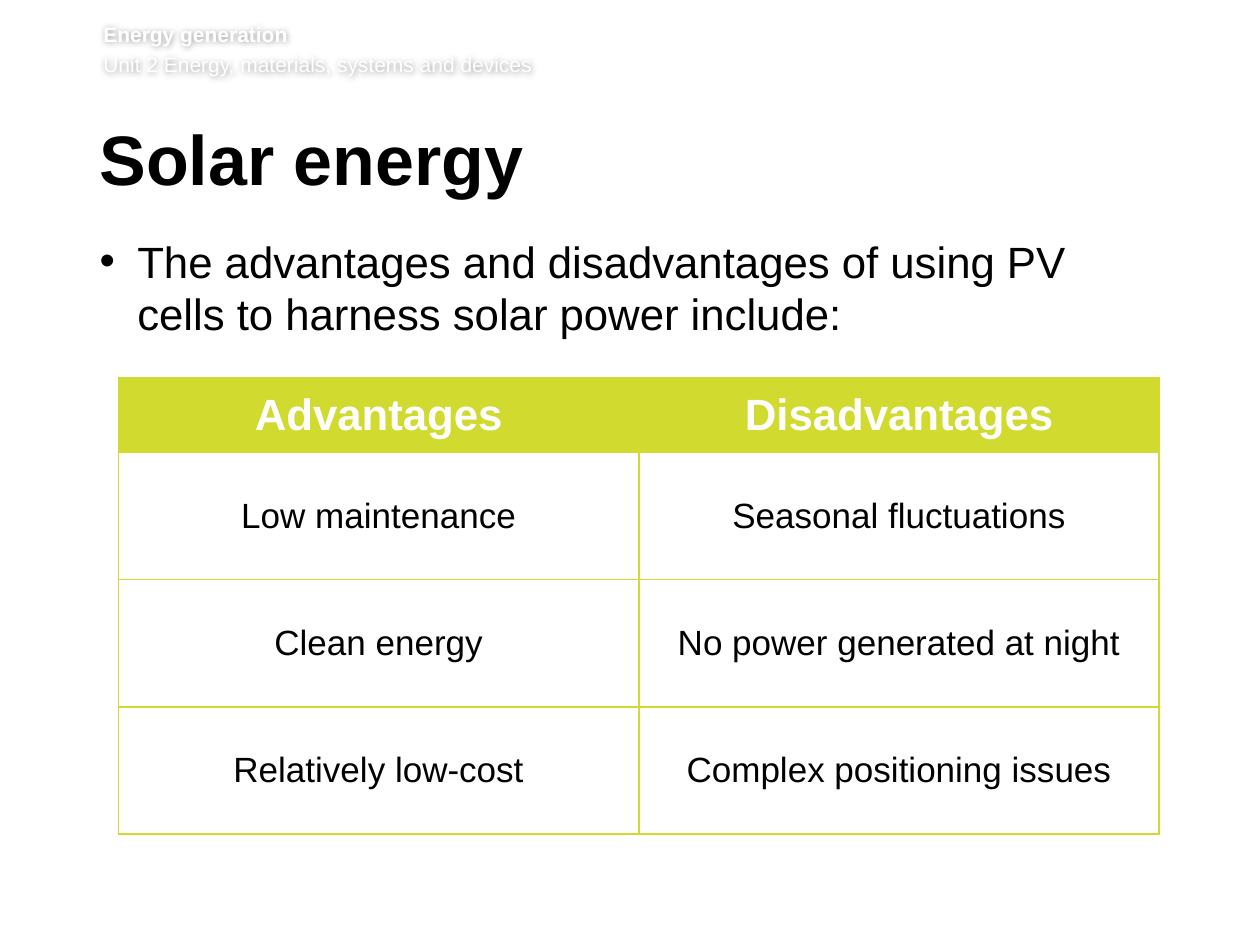
from dataclasses import dataclass
from lxml.etree import SubElement
from pptx import Presentation
from pptx.dml.color import RGBColor as Color
from pptx.enum.text import MSO_ANCHOR as Anchor, PP_ALIGN as Align
from pptx.oxml.ns import qn
from pptx.util import Inches, Pt

HEADER = [("Energy generation", True),
          ("Unit 2 Energy, materials, systems and devices", False)]
TITLE = "Solar energy"
INTRO = "The advantages and disadvantages of using PV cells to harness solar power include:"
ROWS = [
    ("Advantages", "Disadvantages"),
    ("Low maintenance", "Seasonal fluctuations"),
    ("Clean energy", "No power generated at night"),
    ("Relatively low-cost", "Complex positioning issues"),
]
TABLE_LEFT, TABLE_TOP, COLUMN_WIDTH = 0.94, 3, 4.13
HEAD_HEIGHT, ROW_HEIGHT = 0.59, 1.01


@dataclass(frozen=True)
class Theme:
    font: str = "Arial"
    black: str = "000000"
    white: str = "FFFFFF"
    lime: str = "D1DA2E"
    header: int = 12
    title: int = 40
    body: int = 25
    cell: int = 20
    border: int = 1
    blur: int = 4


THEME = Theme()


def style(para, size, color, bold=False):
    para.font.name = THEME.font
    para.font.size = Pt(size)
    para.font.bold = bold
    para.font.color.rgb = Color.from_string(color)


def add_box(page, left, top, width, height, margins):
    box = page.shapes.add_textbox(*map(Inches, (left, top, width, height)))
    frame = box.text_frame
    frame.word_wrap = True
    (frame.margin_left, frame.margin_top,
     frame.margin_right, frame.margin_bottom) = map(Inches, margins)
    return box


def add_halo(box):
    effects = SubElement(box._element.spPr, qn("a:effectLst"))
    shadow = SubElement(effects, qn("a:outerShdw"), blurRad=str(Pt(THEME.blur)),
                        dist="0", dir="0", algn="ctr", rotWithShape="0")
    color = SubElement(shadow, qn("a:srgbClr"), val=THEME.black)
    SubElement(color, qn("a:alpha"), val="40000")


def add_bullet(para, indent):
    props = para._p.get_or_add_pPr()
    props.set("marL", str(Inches(indent)))
    props.set("indent", str(-Inches(indent)))
    SubElement(props, qn("a:buFont"), typeface=THEME.font)
    SubElement(props, qn("a:buChar"), char="•")


def add_borders(cell):
    props = cell._tc.get_or_add_tcPr()
    for index, side in enumerate(("lnL", "lnR", "lnT", "lnB")):
        line = props.makeelement(qn(f"a:{side}"), {"w": str(Pt(THEME.border))})
        fill = SubElement(line, qn("a:solidFill"))
        SubElement(fill, qn("a:srgbClr"), val=THEME.lime)
        props.insert(index, line)


def add_header(page):
    box = add_box(page, 0.82, 0.17, 8.82, 0.49, (0, 0, 0, 0.05))
    add_halo(box)
    frame = box.text_frame
    for index, (text, bold) in enumerate(HEADER):
        para = frame.add_paragraph() if index else frame.paragraphs[0]
        if index:
            para.space_before = Pt(2.9)
        para.text = text
        style(para, THEME.header, THEME.white, bold)


def add_title(page):
    box = add_box(page, 0.79, 0.99, 8.55, 0.73, (0, 0.05, 0.1, 0.05))
    para = box.text_frame.paragraphs[0]
    para.text = TITLE
    para.line_spacing = Pt(39)
    style(para, THEME.title, THEME.black, True)


def add_intro(page):
    box = add_box(page, 0.79, 1.86, 8.53, 1, (0, 0, 0.1, 0.05))
    para = box.text_frame.paragraphs[0]
    para.text = INTRO
    add_bullet(para, 0.3)
    style(para, THEME.body, THEME.black)


def add_comparison(page):
    heights = [HEAD_HEIGHT] + [ROW_HEIGHT] * (len(ROWS) - 1)
    columns = len(ROWS[0])
    table = page.shapes.add_table(
        len(ROWS), columns, Inches(TABLE_LEFT), Inches(TABLE_TOP),
        Inches(COLUMN_WIDTH * columns), Inches(sum(heights))).table
    table.horz_banding = False
    for column in table.columns:
        column.width = Inches(COLUMN_WIDTH)
    for index, (texts, height) in enumerate(zip(ROWS, heights)):
        table.rows[index].height = Inches(height)
        is_head = index == 0
        for cell, text in zip(table.rows[index].cells, texts):
            cell.text = text
            cell.vertical_anchor = Anchor.MIDDLE
            if is_head:
                cell.fill.solid()
                cell.fill.fore_color.rgb = Color.from_string(THEME.lime)
            else:
                cell.fill.background()
            add_borders(cell)
            para = cell.text_frame.paragraphs[0]
            para.alignment = Align.CENTER
            style(para, THEME.body if is_head else THEME.cell,
                  THEME.white if is_head else THEME.black, is_head)


def main():
    deck = Presentation()
    deck.slide_width, deck.slide_height = Inches(10), Inches(7.5)
    page = deck.slides.add_slide(deck.slide_layouts[6])
    add_header(page)
    add_title(page)
    add_intro(page)
    add_comparison(page)
    deck.save("out.pptx")


if __name__ == "__main__":
    main()
